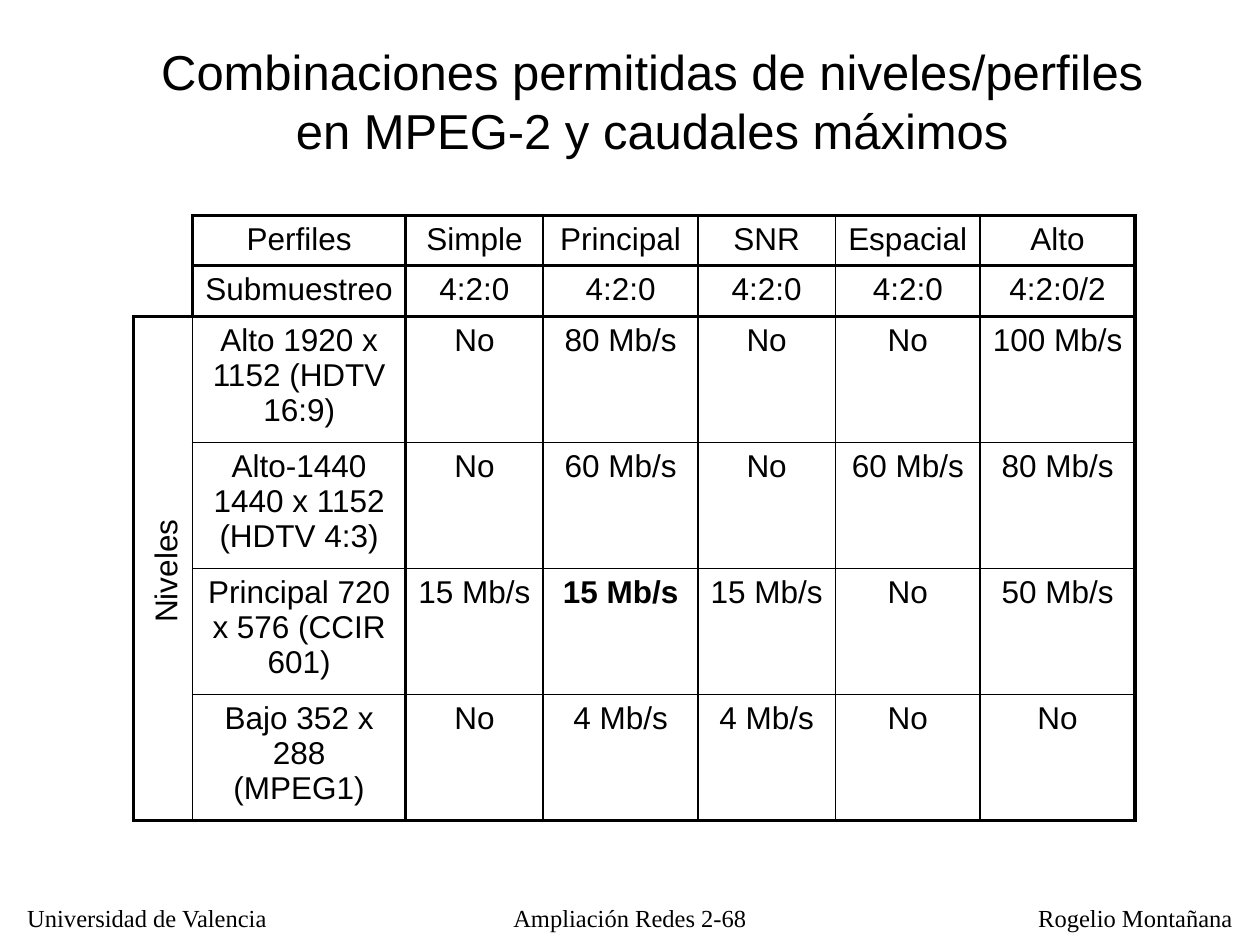
"""Build the slide on MPEG-2 level and profile combinations."""
from lxml.etree import SubElement
from pptx import Presentation
from pptx.dml.color import RGBColor
from pptx.enum.text import MSO_AUTO_SIZE, PP_ALIGN
from pptx.oxml.ns import qn
from pptx.util import Cm, Pt

INK = {"text": "000000", "line": "000000", "back": "FFFFFF"}
THICK, THIN = 2.25, 1


def style(frame, size, font, align):
    for para in frame.paragraphs:
        para.alignment = align
        for run in para.runs:
            run.font.size = Pt(size)
            run.font.name = font
            run.font.color.rgb = RGBColor.from_string(INK["text"])


def edge(cell, side, width):
    line = SubElement(cell._tc.get_or_add_tcPr(), qn("a:ln" + side), w=str(Pt(width)))
    if width:
        fill = SubElement(line, qn("a:solidFill"))
        SubElement(fill, qn("a:srgbClr"), val=INK["line"])
    else:
        SubElement(line, qn("a:noFill"))


deck = Presentation()
deck.slide_width, deck.slide_height = Cm(25.4), Cm(19.05)
slide = deck.slides.add_slide(deck.slide_layouts[6])
slide.background.fill.solid()
slide.background.fill.fore_color.rgb = RGBColor.from_string(INK["back"])

rows = [
    ["", "Perfiles", "Simple", "Principal", "SNR", "Espacial", "Alto"],
    ["", "Submuestreo", "4:2:0", "4:2:0", "4:2:0", "4:2:0", "4:2:0/2"],
    ["", "Alto 1920 x 1152 (HDTV 16:9)", "No", "80 Mb/s", "No", "No", "100 Mb/s"],
    ["", "Alto-1440 1440 x 1152 (HDTV 4:3)", "No", "60 Mb/s", "No", "60 Mb/s", "80 Mb/s"],
    ["", "Principal 720 x 576 (CCIR 601)", "15 Mb/s", "15 Mb/s", "15 Mb/s", "No", "50 Mb/s"],
    ["", "Bajo 352 x 288 (MPEG1)", "No", "4 Mb/s", "4 Mb/s", "No", "No"],
]
wide = [1.19, 4.3, 2.77, 3.12, 2.77, 2.92, 3.12]
high = [1.01] * 2 + [2.54] * 4

grid = slide.shapes.add_table(
    len(high), len(wide), Cm(2.69), Cm(4.34), Cm(sum(wide)), Cm(sum(high))
).table
grid.first_row = grid.horz_banding = False
for col, width in zip(grid.columns, wide):
    col.width = Cm(width)
for row, height in zip(grid.rows, high):
    row.height = Cm(height)
grid.cell(0, 0).merge(grid.cell(1, 0))
grid.cell(2, 0).merge(grid.cell(5, 0))

down = [[0, 0] + [THICK] * 4, [THICK] * 2 + [THIN] * 4, [THICK] * 6]
down += [[THIN] * 6] * 4 + [[THICK] * 6]
side = [0, 0, THICK, 0, 0, 0, THICK]
body = [THICK, THICK, THICK, THIN, THIN, THIN, THICK]

for r, words in enumerate(rows):
    for c, word in enumerate(words):
        cell = grid.cell(r, c)
        flat = body if c else side
        last = r + cell.span_height if cell.is_merge_origin else r + 1
        edge(cell, "L", down[c][r])
        edge(cell, "R", down[c + 1][r])
        edge(cell, "T", flat[r])
        edge(cell, "B", flat[last])
        cell.fill.background()
        if word:
            cell.text_frame.text = word
            style(cell.text_frame, 18, "Arial", PP_ALIGN.CENTER)
grid.cell(4, 3).text_frame.paragraphs[0].runs[0].font.bold = True

title = "Combinaciones permitidas de niveles/perfiles en MPEG-2 y caudales máximos"
left, mid = PP_ALIGN.LEFT, PP_ALIGN.CENTER
notes = [
    ("Universidad de Valencia", 0.3, 18.08, 5.41, 0.84, 14, "Times New Roman", left, False, 0),
    ("Rogelio Montañana", 20.68, 18.08, 4.42, 0.84, 14, "Times New Roman", left, False, 0),
    ("Ampliación Redes 2-68", 9.9, 18.08, 5.6, 0.8, 14, "Times New Roman", mid, True, 0),
    ("Niveles", 2.03, 11, 2.59, 1.02, 18, "Arial", left, False, 270),
    (title, 2.49, 0.71, 21.31, 2.64, 28, "Arial", mid, True, 0),
]
for text, x, y, w, h, size, font, align, wrap, turn in notes:
    box = slide.shapes.add_textbox(Cm(x), Cm(y), Cm(w), Cm(h))
    box.rotation = turn
    frame = box.text_frame
    frame.text = text
    frame.word_wrap = wrap
    frame.auto_size = MSO_AUTO_SIZE.NONE
    style(frame, size, font, align)

deck.save("out.pptx")
